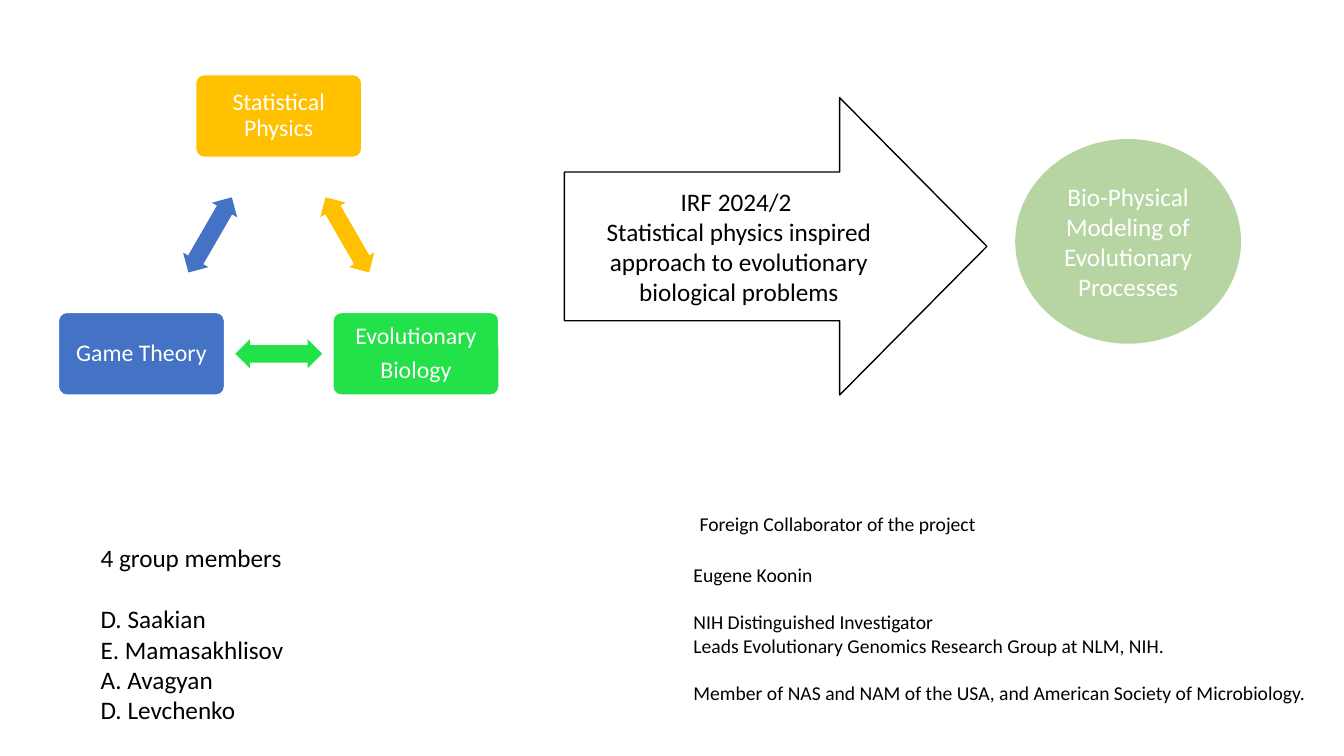
from lxml import etree
from pptx import Presentation
from pptx.dml.color import RGBColor
from pptx.enum.shapes import MSO_SHAPE
from pptx.enum.text import MSO_ANCHOR, PP_ALIGN
from pptx.oxml.ns import qn
from pptx.util import Inches, Pt

CENTER, LEFT = PP_ALIGN.CENTER, PP_ALIGN.LEFT
MIDDLE, TOP = MSO_ANCHOR.MIDDLE, MSO_ANCHOR.TOP
ROUND, OVAL = MSO_SHAPE.ROUNDED_RECTANGLE, MSO_SHAPE.OVAL
ARROW, DOUBLE = MSO_SHAPE.RIGHT_ARROW, MSO_SHAPE.LEFT_RIGHT_ARROW

WIDE, HIGH = Inches(13.33), Inches(7.5)
FONT = "Calibri"
LINE = 1.22  # line height as a share of the font size
COLORS = {
    "gold": "FFC000", "green": "23E148", "blue": "4472C4",
    "sage": "70AD47", "white": "FFFFFF", "black": "000000",
}


def rgb(name):
    return RGBColor.from_string(COLORS[name])


def place(box):
    """Turn a box in percent of the slide into slide units."""
    x, y, w, h = box
    return [int(v * side / 100) for v, side in
            ((x, WIDE), (y, HIGH), (w, WIDE), (h, HIGH))]


def add_shape(slide, kind, box, fill, line=None, adjust=()):
    shape = slide.shapes.add_shape(kind, *place(box))
    shape.shadow.inherit = False
    shape.fill.solid()
    shape.fill.fore_color.rgb = rgb(fill)
    if line:
        shape.line.color.rgb = rgb(line)
        shape.line.width = Pt(1)
    else:
        shape.line.fill.background()
    for i, value in enumerate(adjust):
        shape.adjustments[i] = value
    return shape


def write(shape, lines, size, color="black", align=CENTER, anchor=MIDDLE,
          gaps=(), wrap=True):
    """Fill a shape with text; the lines listed in gaps follow one empty line."""
    frame = shape.text_frame
    frame.word_wrap = wrap
    frame.vertical_anchor = anchor
    frame.text = "\n".join(lines)
    for i, para in enumerate(frame.paragraphs):
        para.alignment = align
        para.font.name = FONT
        para.font.size = Pt(size)
        para.font.color.rgb = rgb(color)
        if i in gaps:
            para.space_before = Pt(size * LINE)
    return frame


def add_note(slide, box, lines, size, gaps=(), wrap=True):
    note = slide.shapes.add_textbox(*place(box))
    write(note, lines, size, align=LEFT, anchor=TOP, gaps=gaps, wrap=wrap)


def add_triad(slide, box):
    """Three fields in a triangle, with a double arrow on each side."""
    x, y, w, h = box
    node_w, node_h = w * 0.377, h * 0.258
    arm_w, arm_h = w * 0.197, h * 0.091
    low = y + h - node_h / 2
    nodes = [
        (x + w / 2, y + node_h / 2, "gold", ["Statistical Physics"]),
        (x + w - node_w / 2, low, "green", ["Evolutionary", "Biology"]),
        (x + node_w / 2, low, "blue", ["Game Theory"]),
    ]
    for i, (cx, cy, color, lines) in enumerate(nodes):
        spot = (cx - node_w / 2, cy - node_h / 2, node_w, node_h)
        node = add_shape(slide, ROUND, spot, color, "white", [0.1])
        frame = write(node, lines, 17, "white")
        frame.margin_left = frame.margin_right = Inches(0.09)
        frame.margin_top = frame.margin_bottom = Inches(0.09)
        for para in frame.paragraphs:
            para.line_spacing = 0.9
            para.space_after = Pt(6)

        next_x, next_y = nodes[(i + 1) % len(nodes)][:2]
        spot = ((cx + next_x - arm_w) / 2, (cy + next_y - arm_h) / 2,
                arm_w, arm_h)
        arm = add_shape(slide, DOUBLE, spot, color, adjust=[0.6, 0.5])
        arm.rotation = 60 + 120 * i


def add_project(slide, box):
    arrow = add_shape(slide, ARROW, box, "white", "black", [0.5, 0.495])
    write(arrow, ["IRF 2024/2 ", "Statistical physics inspired approach to "
                  "evolutionary biological problems"], 18)


def add_goal(slide, box):
    goal = add_shape(slide, OVAL, box, "sage")
    tint = goal.fill._xPr.find(qn("a:solidFill"))[0]
    etree.SubElement(tint, qn("a:alpha")).set("val", "50000")
    write(goal, ["Bio-Physical Modeling of Evolutionary Processes"], 18,
          "white")


def add_team(slide, box):
    add_note(slide, box, [
        "4 group members", "D. Saakian", "E. Mamasakhlisov", "A. Avagyan",
        "D. Levchenko"], 18, gaps=[1], wrap=False)


def add_partner(slide, box):
    x, y, w, h = box
    add_note(slide, (x + 0.45, y, w * 0.46, h * 0.17),
             ["Foreign Collaborator of the project"], 14, wrap=False)
    add_note(slide, (x, y + h * 0.25, w, h * 0.75), [
        "Eugene Koonin",
        "NIH Distinguished Investigator",
        "Leads Evolutionary Genomics Research Group at NLM, NIH.",
        "Member of NAS and NAM of the USA, and American Society of "
        "Microbiology."], 14, gaps=[1, 3])


def main():
    deck = Presentation()
    deck.slide_width, deck.slide_height = WIDE, HIGH
    slide = deck.slides.add_slide(deck.slide_layouts[6])
    add_triad(slide, (4.35, 9.87, 32.78, 42.4))
    add_project(slide, (42, 12.93, 31.43, 39.33))
    add_goal(slide, (75.54, 18.4, 16.8, 27.07))
    add_team(slide, (6.75, 71.13, 15.15, 25.6))
    add_partner(slide, (50.86, 67.07, 49.14, 26.8))
    deck.save("out.pptx")


if __name__ == "__main__":
    main()
